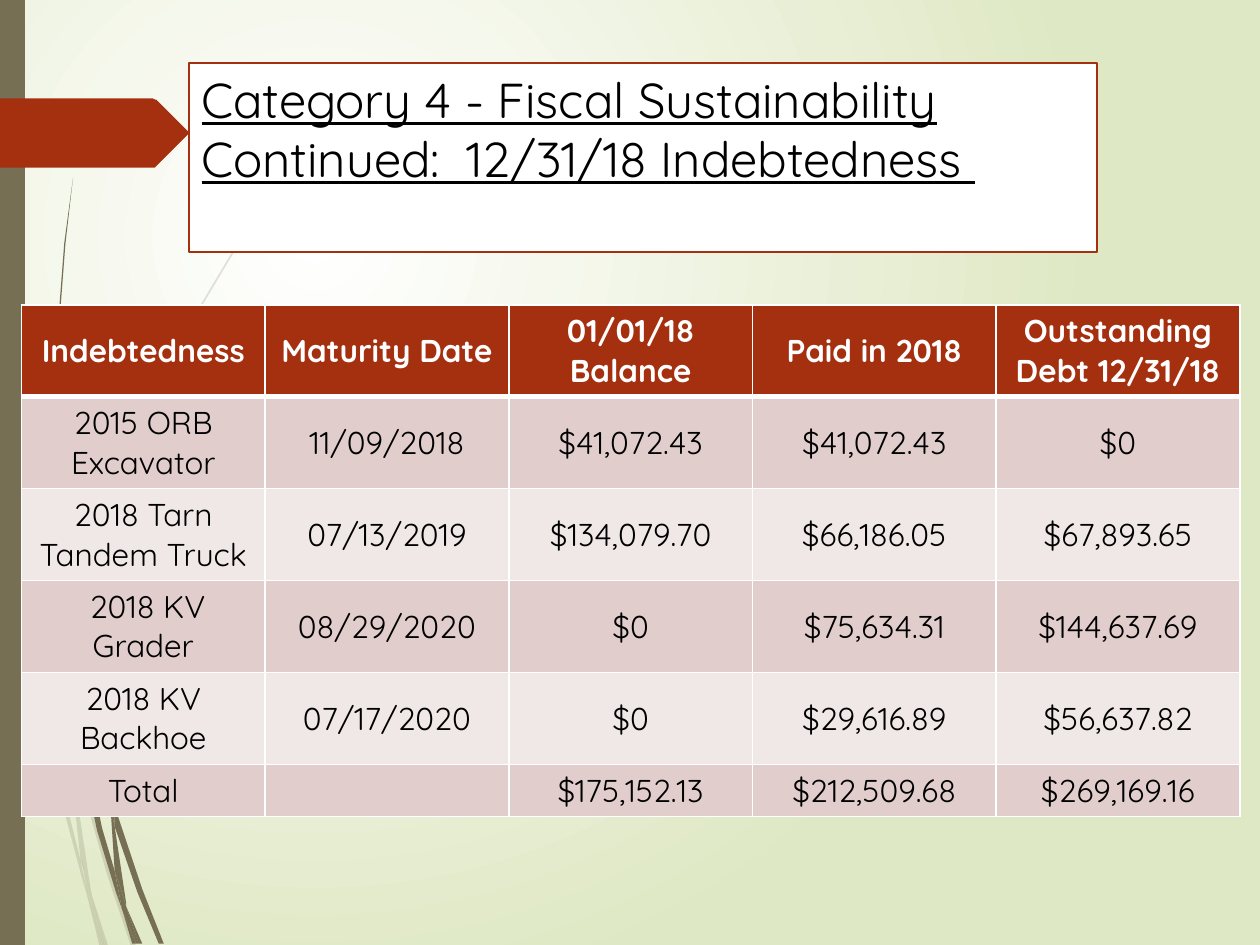
from lxml.etree import SubElement
from pptx import Presentation
from pptx.dml.color import RGBColor
from pptx.enum.text import MSO_ANCHOR, PP_ALIGN
from pptx.oxml.ns import qn
from pptx.util import Pt

PX = 9144  # 100 px to the inch
FONT = "Quicksand"
HUE = {"white": "FFFFFF", "black": "000000", "rust": "A53010", "olive": "766F54",
       "sage": "DFE8C4", "rose": "E1CDCC", "pale": "F0E8E7"}

TITLE = "Category 4 - Fiscal Sustainability Continued:  12/31/18 Indebtedness "
ROWS = [
    ("Indebtedness", "Maturity Date", "01/01/18 Balance", "Paid in 2018",
     "Outstanding Debt 12/31/18"),
    ("2015 ORB Excavator", "11/09/2018", "$41,072.43", "$41,072.43", "$0"),
    ("2018 Tarn Tandem Truck", "07/13/2019", "$134,079.70", "$66,186.05", "$67,893.65"),
    (" 2018 KV Grader", "08/29/2020", "$0", "$75,634.31", "$144,637.69"),
    ("2018 KV Backhoe", "07/17/2020", "$0", "$29,616.89", "$56,637.82"),
    ("Total", "", "$175,152.13", "$212,509.68", "$269,169.16"),
]
HIGH = [72, 73, 73, 73, 73, 41]
GRID = (17, 242, 967, sum(HIGH))
HEAD = (150, 50, 721, 150)

# Grass blades, each an outline of corner points
FAINT = [
    [(8, 350), (6, 322), (0, 282), (0, 299), (7, 344)],
    [(40, 522), (59, 599), (59, 586), (43, 520), (10, 345), (12, 376)],
    [(64, 607), (61, 596), (61, 610), (85, 694), (104, 751), (108, 751), (88, 692)],
    [(83, 751), (86, 751), (73, 711)],
    [(64, 683), (48, 619), (22, 469), (12, 376), (8, 350), (19, 470), (45, 621),
     (64, 693), (70, 714), (69, 707)],
    [(58, 599), (60, 646), (64, 683), (67, 692), (73, 711), (72, 706), (63, 646),
     (61, 610), (61, 608)],
    [(61, 584), (76, 462), (111, 349), (159, 245), (187, 198), (201, 175), (217, 154),
     (217, 153), (201, 175), (186, 197), (158, 244), (110, 348), (75, 461), (59, 584),
     (59, 586), (61, 596)],
    [(70, 714), (79, 751), (82, 751)],
    [(61, 608), (61, 610), (61, 596), (59, 586), (58, 599)],
    [(67, 692), (65, 683), (69, 707), (70, 714), (82, 751), (83, 751), (73, 711)],
]
SOLID = [
    [(5, 110), (14, 233), (27, 355), (46, 477), (47, 481), (45, 457), (45, 453),
     (30, 355), (15, 232), (6, 109), (4, 48), (3, 0), (2, 0), (3, 48)],
    [(73, 592), (88, 645), (88, 633), (88, 631), (77, 590), (50, 472), (53, 505)],
    [(94, 649), (91, 641), (91, 656), (109, 708), (126, 749), (130, 749), (113, 706)],
    [(91, 691), (81, 657), (60, 556), (53, 505), (47, 477), (56, 557), (77, 659),
     (92, 708), (97, 722), (96, 717)],
    [(50, 472), (48, 453), (44, 349), (48, 245), (52, 193), (58, 141), (51, 193),
     (47, 245), (43, 349), (45, 449), (49, 472)],
    [(110, 749), (113, 749), (100, 719)],
    [(47, 477), (53, 505), (50, 472), (49, 472), (45, 449), (45, 453)],
    [(91, 633), (103, 552), (131, 476), (169, 406), (191, 374), (203, 359), (216, 344),
     (215, 344), (203, 358), (191, 373), (168, 405), (129, 474), (101, 551), (88, 631),
     (91, 641)],
    [(97, 722), (105, 749), (108, 749)],
    [(88, 645), (91, 691), (96, 706), (100, 719), (100, 716), (91, 656), (90, 651)],
    [(88, 645), (90, 651), (91, 656), (91, 641), (88, 631), (88, 633)],
    [(96, 706), (91, 691), (96, 717), (97, 722), (108, 749), (110, 749), (100, 719)],
]
BAR = [(0, 0), (20, 0), (20, 750), (0, 750)]
ARROW = [(149, 107), (124, 132), (123, 133), (121, 133), (0, 133), (0, 78), (121, 78),
         (123, 79), (124, 79), (149, 104), (150, 105)]


def rgb(name):
    return RGBColor.from_string(HUE[name])


def emu(box):
    return [n * PX for n in box]


def paint(fill, name):
    fill.solid()
    fill.fore_color.rgb = rgb(name)


def style(font, hue, **form):
    font.color.rgb = rgb(hue)
    for key, val in {"name": FONT, **form}.items():
        setattr(font, key, val)


def trace(slide, pts, name, alpha=None):
    """Draw a filled outline through the points."""
    pen = slide.shapes.build_freeform(*pts[0], scale=PX)
    pen.add_line_segments(pts[1:])
    shape = pen.convert_to_shape()
    shape.shadow.inherit = False
    shape.line.fill.background()
    paint(shape.fill, name)
    if alpha:
        tone = shape.element.spPr.find(".//" + qn("a:srgbClr"))
        SubElement(tone, qn("a:alpha"), val=str(alpha * 1000))


def glow(slide):
    """Give the slide a round gradient, lightest at upper left."""
    fill = slide.background.fill
    fill.gradient()
    for stop, name in zip(fill.gradient_stops, ("white", "sage")):
        stop.color.rgb = rgb(name)
    grad = slide.element.find(".//" + qn("a:gradFill"))
    grad.remove(grad.find(qn("a:lin")))
    ring = SubElement(grad, qn("a:path"), path="circle")
    SubElement(ring, qn("a:fillToRect"), l="50000", t="50000", r="100000", b="100000")


def edge(cell, top, base):
    """Draw white cell borders, with top and base widths in points."""
    props = cell._tc.get_or_add_tcPr()
    for side, wide in zip("LRTB", (1, 1, top, base)):
        line = SubElement(props, qn("a:ln" + side), w=str(Pt(wide)))
        SubElement(SubElement(line, qn("a:solidFill")), qn("a:srgbClr"), val=HUE["white"])


def head(slide):
    title = slide.shapes.title
    title.element.getparent().append(title.element)  # in front of the blades
    title.left, title.top, title.width, title.height = emu(HEAD)
    paint(title.fill, "white")
    title.line.color.rgb = rgb("rust")
    title.line.width = Pt(1.25)
    frame = title.text_frame
    frame.text = TITLE
    frame.word_wrap = True
    frame.vertical_anchor = MSO_ANCHOR.TOP
    para = frame.paragraphs[0]
    para.alignment = PP_ALIGN.LEFT
    style(para.runs[0].font, "black", size=Pt(28), underline=True)


def table(slide):
    grid = slide.shapes.add_table(len(ROWS), len(ROWS[0]), *emu(GRID)).table
    for col in grid.columns:
        col.width = GRID[2] * PX // len(ROWS[0])
    for r, row in enumerate(ROWS):
        grid.rows[r].height = HIGH[r] * PX
        top = r == 0
        tone = "rust" if top else ("pale", "rose")[r % 2]
        for c, text in enumerate(row):
            cell = grid.cell(r, c)
            edge(cell, 3 if r == 1 else 1, 3 if top else 1)
            paint(cell.fill, tone)
            cell.vertical_anchor = MSO_ANCHOR.MIDDLE
            cell.text = text
            para = cell.text_frame.paragraphs[0]
            para.alignment = PP_ALIGN.CENTER
            style(para.font, "white" if top else "black", size=Pt(18), bold=top)


def main():
    deck = Presentation()
    deck.slide_width, deck.slide_height = emu((1000, 750))
    slide = deck.slides.add_slide(deck.slide_layouts[5])
    glow(slide)
    for blade in FAINT:
        trace(slide, blade, "olive", 20)
    for blade in SOLID:
        trace(slide, blade, "olive")
    trace(slide, BAR, "olive")
    trace(slide, ARROW, "rust")
    head(slide)
    table(slide)
    deck.save("out.pptx")


if __name__ == "__main__":
    main()
